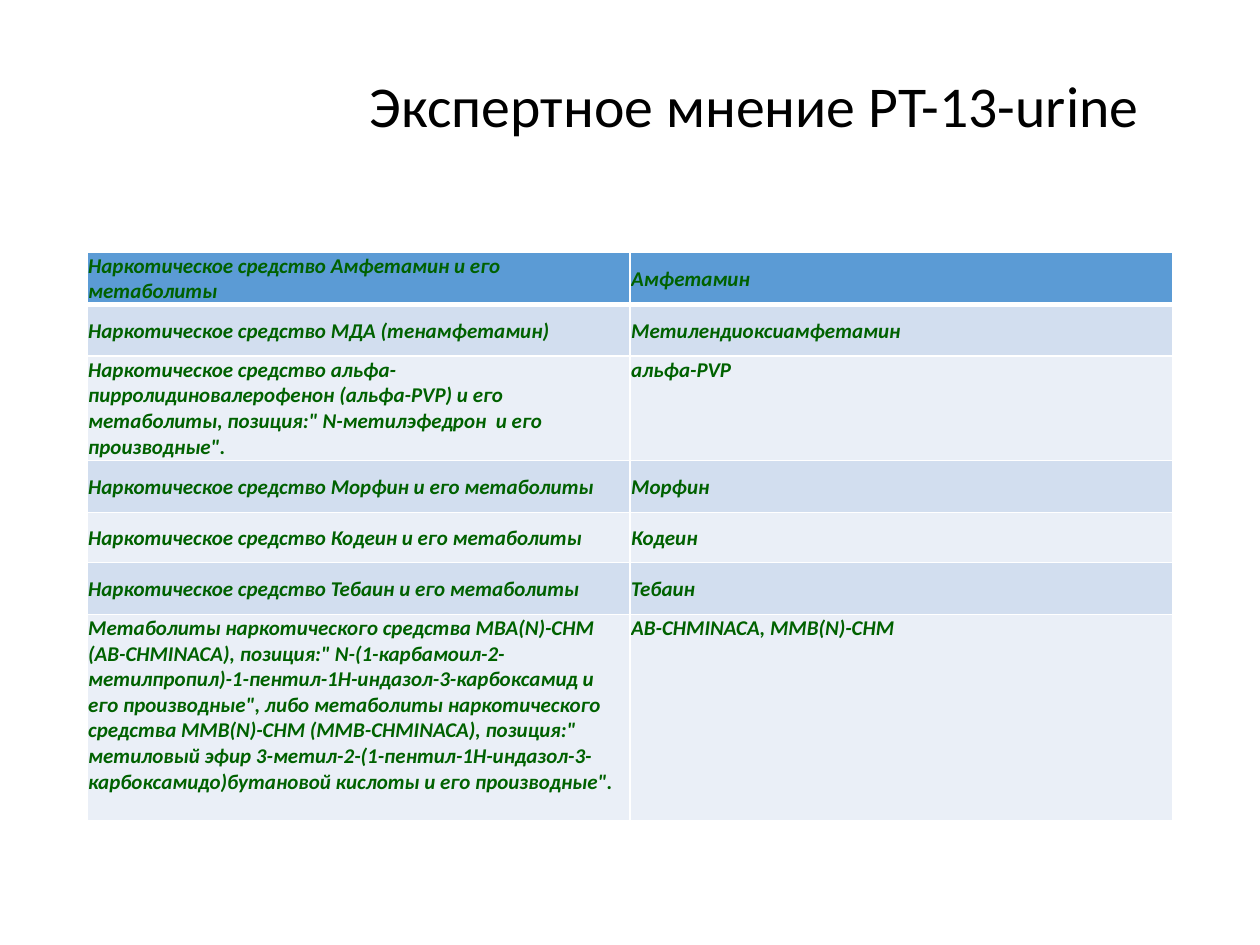
from dataclasses import dataclass

from lxml.etree import SubElement
from pptx import Presentation
from pptx.dml.color import RGBColor
from pptx.enum.text import MSO_ANCHOR as Anchor, PP_ALIGN as Align
from pptx.oxml.ns import qn
from pptx.util import Inches, Pt


@dataclass(frozen=True)
class Theme:
    font: str = "Calibri"
    title_size: int = 33
    cell_size: int = 12
    title: str = "000000"
    text: str = "006100"
    header: str = "5B9BD5"
    band_dark: str = "D2DEEF"
    band_light: str = "EAEFF7"
    border: str = "FFFFFF"


theme = Theme()


def style_font(font, size, color, emphasis=False):
    font.name = theme.font
    font.size = Pt(size)
    font.color.rgb = RGBColor.from_string(color)
    font.bold = emphasis
    font.italic = emphasis


def add_borders(cell, top, bottom):
    properties = cell._tc.get_or_add_tcPr()
    widths = {"a:lnL": 1, "a:lnR": 1, "a:lnT": top, "a:lnB": bottom}
    for position, (tag, width) in enumerate(widths.items()):
        line = SubElement(properties, qn(tag), w=str(Pt(width)))
        fill = SubElement(line, qn("a:solidFill"))
        SubElement(fill, qn("a:srgbClr"), val=theme.border)
        properties.insert(position, line)


deck = Presentation()
deck.slide_width = Inches(10)
deck.slide_height = Inches(7.5)
page = deck.slides.add_slide(deck.slide_layouts[5])

title = page.shapes.title
title.left, title.top = Inches(0.85), Inches(0.42)
title.width, title.height = Inches(8.29), Inches(0.89)
title.text_frame.text = "Экспертное мнение PT-13-urine"
title.text_frame.vertical_anchor = Anchor.MIDDLE
para = title.text_frame.paragraphs[0]
para.alignment = Align.RIGHT
para.line_spacing = 0.9
style_font(para.font, theme.title_size, theme.title)

findings = [
    ("Наркотическое средство Амфетамин и его метаболиты", "Амфетамин", 0.41, Anchor.MIDDLE),
    ("Наркотическое средство МДА (тенамфетамин)", "Метилендиоксиамфетамин", 0.41, Anchor.MIDDLE),
    ("Наркотическое средство aльфа-пирролидиновалерофенон (альфа-PVP) и его метаболиты, "
     "позиция:\" N-метилэфедрон  и его производные\".", "альфа-PVP", 0.83, Anchor.TOP),
    ("Наркотическое средство Морфин и его метаболиты", "Морфин", 0.41, Anchor.MIDDLE),
    ("Наркотическое средство Кодеин и его метаболиты", "Кодеин", 0.4, Anchor.MIDDLE),
    ("Наркотическое средство Тебаин и его метаболиты", "Тебаин", 0.41, Anchor.MIDDLE),
    ("Метаболиты наркотического средства MBA(N)-CHM (AB-CHMINACA), позиция:\" "
     "N-(1-карбамоил-2-метилпропил)-1-пентил-1Н-индазол-3-карбоксамид и его производные\", "
     "либо метаболиты наркотического средства MMB(N)-CHM (MMB-CHMINACA), позиция:\" "
     "метиловый эфир 3-метил-2-(1-пентил-1H-индазол-3-карбоксамидо)бутановой кислоты "
     "и его производные\".", "AB-CHMINACA, MMB(N)-CHM", 1.64, Anchor.TOP),
]

table_height = sum(height for _, _, height, _ in findings)
table = page.shapes.add_table(
    len(findings), 2, Inches(0.69), Inches(2), Inches(8.62), Inches(table_height)
).table

for row_index, (substance, marker, height, anchor) in enumerate(findings):
    table.rows[row_index].height = Inches(height)
    band = theme.band_dark if row_index % 2 else theme.band_light
    color = band if row_index else theme.header
    for column_index, text in enumerate((substance, marker)):
        cell = table.cell(row_index, column_index)
        cell.text = text
        cell.vertical_anchor = anchor
        cell.margin_left = cell.margin_right = cell.margin_top = Inches(0.01)
        cell.margin_bottom = 0
        cell.fill.solid()
        cell.fill.fore_color.rgb = RGBColor.from_string(color)
        add_borders(cell, 3 if row_index == 1 else 1, 3 if row_index == 0 else 1)
        style_font(cell.text_frame.paragraphs[0].font, theme.cell_size, theme.text, True)

deck.save("out.pptx")
